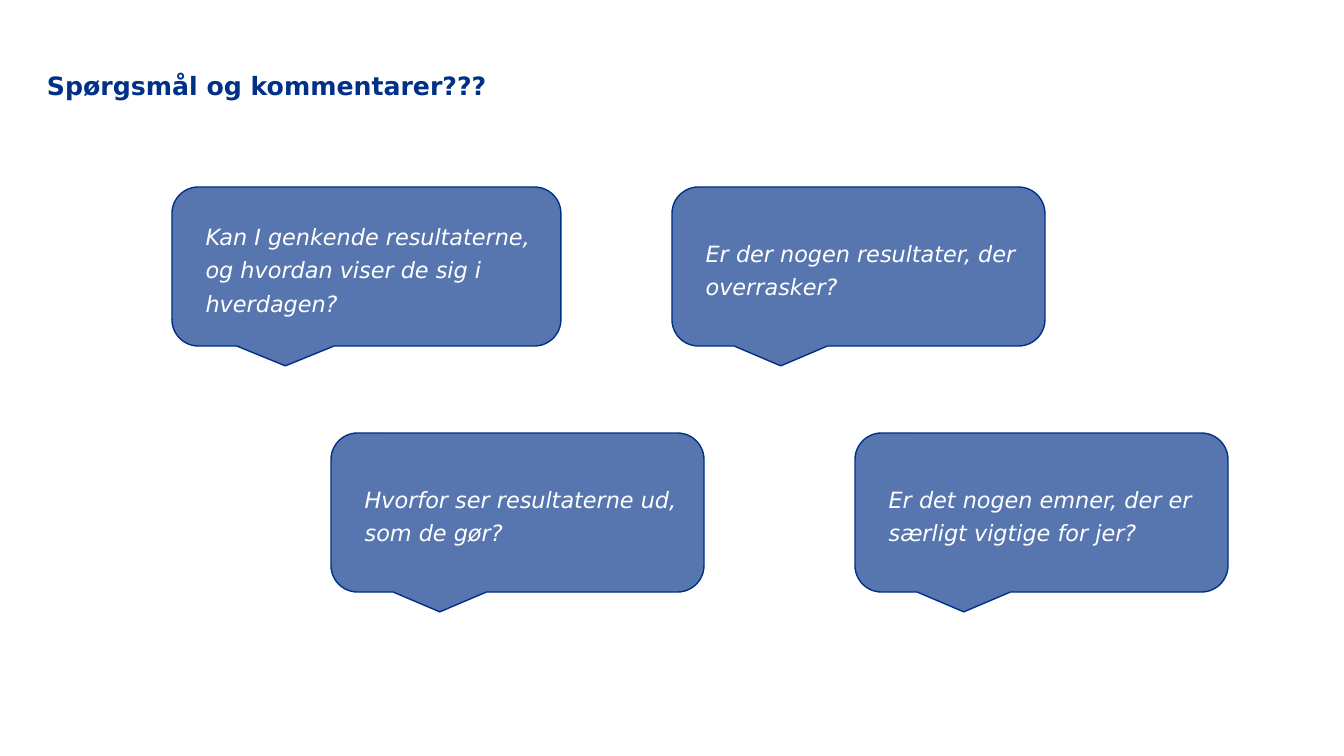
from dataclasses import dataclass

from lxml.etree import SubElement
from pptx import Presentation
from pptx.dml.color import RGBColor
from pptx.enum.shapes import MSO_SHAPE as Shape
from pptx.enum.text import MSO_ANCHOR as Anchor, MSO_AUTO_SIZE as AutoSize, PP_ALIGN as Align
from pptx.oxml.ns import qn
from pptx.util import Emu, Pt

PX_PER_INCH = 100.8


@dataclass(frozen=True)
class Theme:
    """Colours, font and type sizes of the slide."""
    navy: RGBColor = RGBColor(0x00, 0x30, 0x87)
    white: RGBColor = RGBColor(0xFF, 0xFF, 0xFF)
    font: str = "DejaVu Sans"
    title_size: int = 18
    bubble_size: int = 16
    bubble_opacity: int = 66


THEME = Theme()
TITLE_BOX = (47, 69, 1249, 39)
UPPER_ROW, LOWER_ROW = 187, 433
BUBBLE_WIDTH, BUBBLE_HEIGHT = 373, 159
QUESTIONS = [
    ("Er der nogen resultater, der overrasker?", 672, UPPER_ROW, BUBBLE_WIDTH),
    ("Kan I genkende resultaterne, og hvordan viser de sig i hverdagen?", 172, UPPER_ROW, 389),
    ("Hvorfor ser resultaterne ud, som de gør?", 331, LOWER_ROW, BUBBLE_WIDTH),
    ("Er det nogen emner, der er særligt vigtige for jer?", 855, LOWER_ROW, BUBBLE_WIDTH),
]


def px(length):
    """Turn pixels into EMU."""
    return Emu(round(length * 914400 / PX_PER_INCH))


def add_span(para, text, size, color, bold=False, italic=False):
    """Add one formatted run to a left-aligned paragraph."""
    para.alignment = Align.LEFT
    span = para.add_run()
    span.text = text
    font = span.font
    font.name, font.size = THEME.font, Pt(size)
    font.bold, font.italic = bold, italic
    font.color.rgb = color


def place_title(page, box, text):
    """Move the title placeholder to its box and fill it."""
    title = page.shapes.title
    title.left, title.top, title.width, title.height = map(px, box)
    frame = title.text_frame
    frame.margin_left = frame.margin_top = frame.margin_right = frame.margin_bottom = 0
    frame.vertical_anchor = Anchor.TOP
    frame.auto_size = AutoSize.NONE
    para = frame.paragraphs[0]
    para.line_spacing = 1.04
    add_span(para, text, THEME.title_size, THEME.navy, bold=True)


def add_bubble(page, box, text):
    """Draw a translucent speech bubble holding one question."""
    bubble = page.shapes.add_shape(Shape.ROUNDED_RECTANGULAR_CALLOUT, *map(px, box))
    bubble.shadow.inherit = False
    bubble.fill.solid()
    bubble.fill.fore_color.rgb = THEME.navy
    color = bubble.fill._xPr.find(qn("a:solidFill"))[0]
    SubElement(color, qn("a:alpha"), val=str(THEME.bubble_opacity * 1000))
    bubble.line.color.rgb = THEME.navy
    bubble.line.width = Pt(1)
    frame = bubble.text_frame
    frame.word_wrap = True
    frame.vertical_anchor = Anchor.MIDDLE
    para = frame.paragraphs[0]
    para.line_spacing = 1.25
    para.space_after = Pt(3)
    properties = para._p.get_or_add_pPr()
    properties.set("marL", str(px(16)))
    properties.set("indent", "0")
    add_span(para, text, THEME.bubble_size, THEME.white, italic=True)


def build_questions_page(deck):
    """Build the slide that invites questions and comments."""
    page = deck.slides.add_slide(deck.slide_layouts[5])
    place_title(page, TITLE_BOX, "Spørgsmål og kommentarer???")
    for text, left, top, width in QUESTIONS:
        add_bubble(page, (left, top, width, BUBBLE_HEIGHT), text)


def main():
    """Create and save the deck."""
    deck = Presentation()
    deck.slide_width, deck.slide_height = px(1344), px(756)
    build_questions_page(deck)
    deck.save("out.pptx")


if __name__ == "__main__":
    main()
